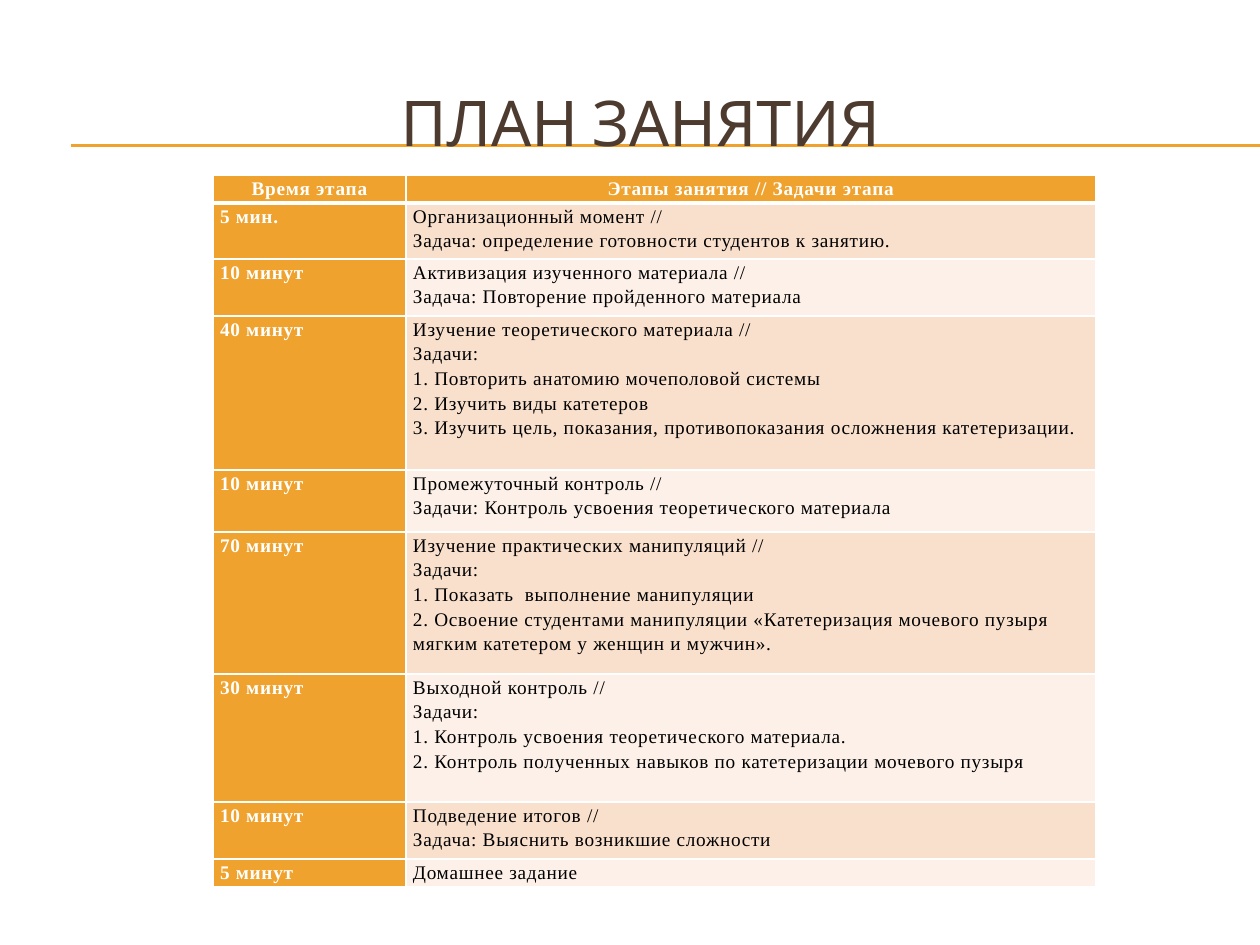
"""Build the lesson plan slide: a ruled title above a two-column timetable."""
from lxml import etree
from pptx import Presentation
from pptx import util as u
from pptx.dml.color import RGBColor
from pptx.enum import text
from pptx.oxml.ns import qn

AMBER = RGBColor(0xF0, 0xA2, 0x2E)
BROWN = RGBColor(0x4E, 0x3B, 0x30)
PEACH = RGBColor(0xF9, 0xE0, 0xCD)
CREAM = RGBColor(0xFC, 0xF0, 0xE8)
WHITE = RGBColor(0xFF, 0xFF, 0xFF)
BLACK = RGBColor(0x00, 0x00, 0x00)

EMU_PER_PX = 914400 / 126
CENTER, JUSTIFY, LEFT = (
    text.PP_ALIGN.CENTER, text.PP_ALIGN.JUSTIFY, text.PP_ALIGN.LEFT)

HEADER = ("Время этапа", "Этапы занятия // Задачи этапа")
HEADER_HEIGHT = 28
COLUMN_WIDTHS = (193, 690)
STAGES = [
    (56, "5 мин.", ["Организационный момент //",
                    "Задача: определение готовности студентов к занятию."]),
    (57, "10 минут", ["Активизация изученного материала //",
                      "Задача: Повторение пройденного материала"]),
    (154, "40 минут", [
        "Изучение теоретического материала //",
        "Задачи:",
        "1. Повторить анатомию мочеполовой системы",
        "2. Изучить виды катетеров",
        "3. Изучить цель, показания, противопоказания осложнения катетеризации."]),
    (62, "10 минут", ["Промежуточный контроль //",
                      "Задачи: Контроль усвоения теоретического материала"]),
    (142, "70 минут", [
        "Изучение практических манипуляций //",
        "Задачи:",
        "1. Показать  выполнение манипуляции",
        "2. Освоение студентами манипуляции «Катетеризация мочевого пузыря "
        "мягким катетером у женщин и мужчин»."]),
    (128, "30 минут", [
        "Выходной контроль //",
        "Задачи:",
        "1. Контроль усвоения теоретического материала.",
        "2. Контроль полученных навыков по катетеризации мочевого пузыря"]),
    (57, "10 минут", ["Подведение итогов //",
                      "Задача: Выяснить возникшие сложности"]),
    (28, "5 минут", ["Домашнее задание"]),
]


def px(length):
    """Turn pixels into EMU."""
    return u.Emu(round(length * EMU_PER_PX))


def apply(target, values):
    """Set every attribute named in a dict of format values."""
    for name, value in values.items():
        setattr(target, name, value)


class PlanSlide:
    """Hold the style and the current slide."""

    heading_font = {"name": "Cabin", "size": u.Pt(36), "bold": False}
    cell_font = {"name": "Times New Roman", "size": u.Pt(11)}
    cell_margins = {"margin_left": px(7), "margin_right": px(7),
                    "margin_top": 0, "margin_bottom": 0}
    letter_spacing = "40"

    def __init__(self, deck):
        """Add a slide that has only a title."""
        self.slide = deck.slides.add_slide(deck.slide_layouts[5])

    def rule(self, left, right, y):
        """Draw a thin horizontal line."""
        line = self.slide.shapes.add_connector(1, px(left), px(y), px(right), px(y))
        line.line.color.rgb = AMBER
        line.line.width = u.Pt(0.75)
        etree.SubElement(line._element.spPr, qn("a:effectLst"))

    def title(self, wording, left, top, width, height):
        """Place the title in front of what is already drawn."""
        heading = self.slide.shapes.title
        apply(heading, {"left": px(left), "top": px(top),
                        "width": px(width), "height": px(height)})
        frame = heading.text_frame
        frame.text = wording
        apply(frame, {"vertical_anchor": text.MSO_ANCHOR.MIDDLE,
                      "auto_size": text.MSO_AUTO_SIZE.NONE, "word_wrap": True})
        paragraph = frame.paragraphs[0]
        paragraph.alignment = CENTER
        font = paragraph.runs[0].font
        apply(font, self.heading_font)
        font.color.rgb = BROWN
        self.slide.shapes._spTree.append(heading._element)

    def borders(self, cell, top, bottom):
        """Give a cell white borders, widths in points."""
        properties = cell._tc.get_or_add_tcPr()
        widths = {"a:lnL": 1, "a:lnR": 1, "a:lnT": top, "a:lnB": bottom}
        for place, (tag, points) in enumerate(widths.items()):
            edge = etree.Element(qn(tag), w=str(u.Pt(points)))
            fill = etree.SubElement(edge, qn("a:solidFill"))
            etree.SubElement(fill, qn("a:srgbClr"), val=str(WHITE))
            properties.insert(place, edge)

    def cell(self, cell, lines, fill, color, bold, alignment, top=1, bottom=1):
        """Write and format one table cell."""
        apply(cell, self.cell_margins)
        cell.fill.solid()
        cell.fill.fore_color.rgb = fill
        self.borders(cell, top, bottom)
        cell.text_frame.text = "\n".join(lines)
        for paragraph in cell.text_frame.paragraphs:
            numbered = paragraph.text[0].isdigit() and not bold
            apply(paragraph, {"alignment": LEFT if numbered else alignment,
                              "line_spacing": 1.15})
            run = paragraph.runs[0]
            apply(run.font, {**self.cell_font, "bold": bold})
            run.font.color.rgb = color
            run._r.get_or_add_rPr().set("spc", self.letter_spacing)

    def timetable(self, left, top):
        """Build the table of lesson stages."""
        heights = [HEADER_HEIGHT] + [height for height, _, _ in STAGES]
        table = self.slide.shapes.add_table(
            len(heights), len(COLUMN_WIDTHS), px(left), px(top),
            px(sum(COLUMN_WIDTHS)), px(sum(heights))).table
        for column, width in zip(table.columns, COLUMN_WIDTHS):
            column.width = px(width)
        for row, height in zip(table.rows, heights):
            row.height = px(height)
        for index, label in enumerate(HEADER):
            self.cell(table.cell(0, index), [label], AMBER, WHITE, True, CENTER,
                      bottom=3)
        for index, (_, duration, tasks) in enumerate(STAGES, 1):
            edge = 3 if index == 1 else 1
            band = PEACH if index % 2 else CREAM
            self.cell(table.cell(index, 0), [duration], AMBER, WHITE, True,
                      JUSTIFY, top=edge)
            self.cell(table.cell(index, 1), tasks, band, BLACK, False,
                      JUSTIFY, top=edge)


def main():
    """Create and save the presentation."""
    deck = Presentation()
    apply(deck, {"slide_width": px(1260), "slide_height": px(945)})
    plan = PlanSlide(deck)
    for y in (145, 146):
        plan.rule(71, 1260, y)
    plan.title("ПЛАН ЗАНЯТИЯ", 42, 63, 1197, 116)
    plan.timetable(213, 175)
    deck.save("out.pptx")


if __name__ == "__main__":
    main()
